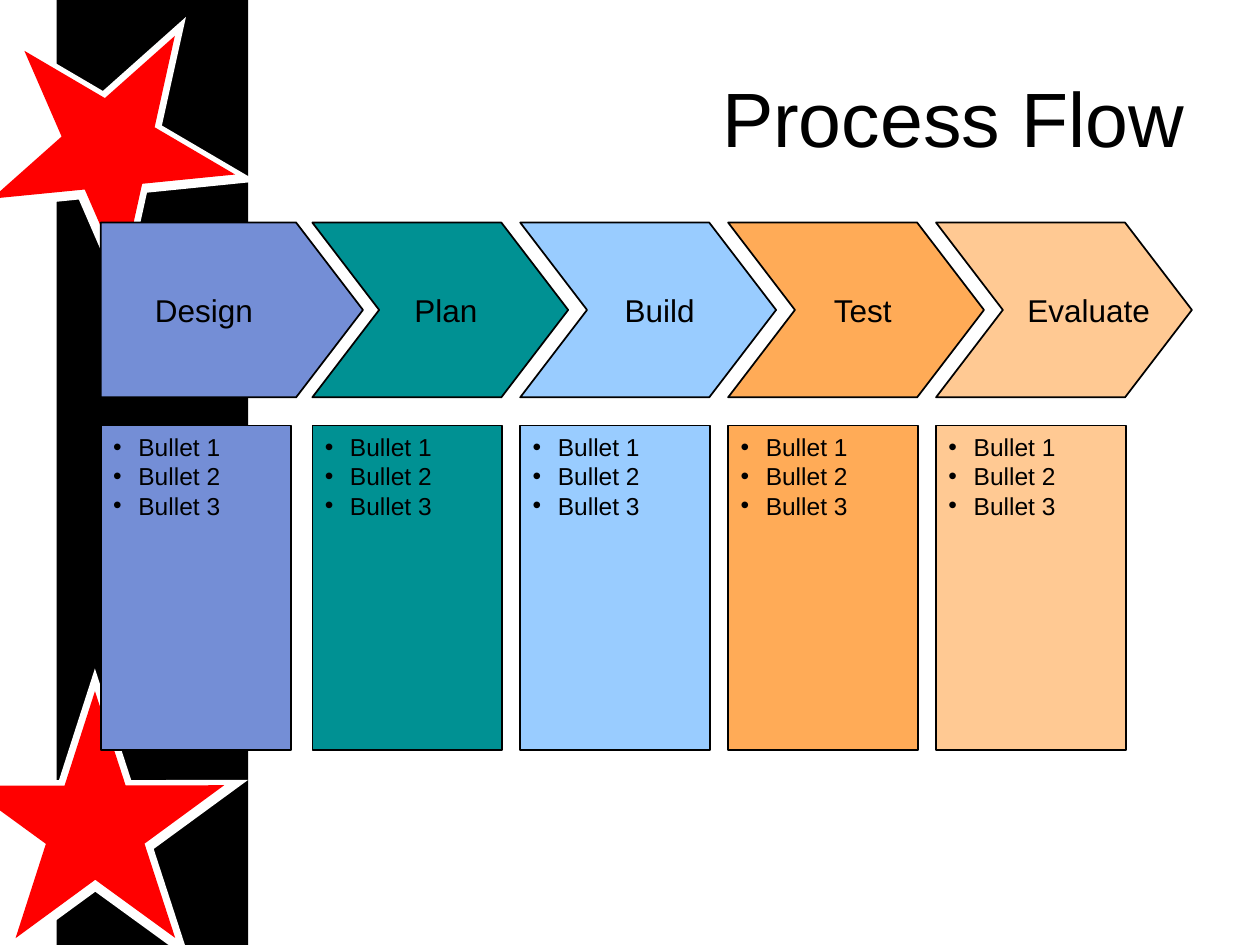
"""Build a five-stage process flow slide with star decoration."""
from pptx import Presentation
from pptx.dml.color import RGBColor
from pptx.enum.shapes import MSO_SHAPE
from pptx.enum.text import MSO_ANCHOR, MSO_AUTO_SIZE, PP_ALIGN
from pptx.oxml.ns import qn
from pptx.util import Pt
from lxml import etree

RECTANGLE, STAR = MSO_SHAPE.RECTANGLE, MSO_SHAPE.STAR_5_POINT
TOP, MIDDLE = MSO_ANCHOR.TOP, MSO_ANCHOR.MIDDLE
LEFT, RIGHT = PP_ALIGN.LEFT, PP_ALIGN.RIGHT
FIT_SHAPE = MSO_AUTO_SIZE.SHAPE_TO_FIT_TEXT

FONT = "Arial"
COLORS = {
    "black": "000000", "white": "FFFFFF", "red": "FF0000",
    "Design": "748ED6", "Plan": "009193", "Build": "99CCFF",
    "Test": "FFAB57", "Evaluate": "FFC993",
}
LABELS = {
    "Design": (81.4, 72), "Plan": (229.7, 52), "Build": (349.9, 56),
    "Test": (469.4, 51), "Evaluate": (580, 87),
}
BULLETS = ("Bullet 1", "Bullet 2", "Bullet 3")
FIRST_LEFT, SECOND_LEFT, PITCH = 57.6, 178.5, 118.8
ARROW_TOP, ARROW_HEIGHT, ARROW_TIP = 127.2, 99.9, 38.2
BOX_TOP, BOX_WIDTH, BOX_HEIGHT = 243.2, 108.6, 185.2


def color(name):
    """Return the named colour."""
    return RGBColor.from_string(COLORS[name])


def paint(shape, fill, outlined=False):
    """Give a shape a flat fill and an optional thin black outline."""
    shape.shadow.inherit = False
    shape.fill.solid()
    shape.fill.fore_color.rgb = color(fill)
    if outlined:
        shape.line.color.rgb = color("black")
        shape.line.width = Pt(1)
    else:
        shape.line.fill.background()


def add_preset(page, kind, left, top, width, height, fill, outlined=False):
    """Add a painted preset shape."""
    shape = page.shapes.add_shape(kind, Pt(left), Pt(top), Pt(width), Pt(height))
    paint(shape, fill, outlined)
    return shape


def add_star(page, center_x, center_y, outer, inner, angle):
    """Add a red star with a white star behind it as its border."""
    for (width, height), fill in ((outer, "white"), (inner, "red")):
        star = add_preset(page, STAR, center_x - width / 2,
                          center_y - height / 2, width, height, fill)
        star.rotation = angle


def add_span(para, text, size):
    """Add one run of black text."""
    span = para.add_run()
    span.text = text
    span.font.name = FONT
    span.font.size = Pt(size)
    span.font.color.rgb = color("black")


def add_text(page, left, top, width, height, text, size, align=LEFT):
    """Add a one-line text box and return its frame."""
    box = page.shapes.add_textbox(Pt(left), Pt(top), Pt(width), Pt(height))
    para = box.text_frame.paragraphs[0]
    para.alignment = align
    add_span(para, text, size)
    return box.text_frame


def add_bullet(para, text):
    """Fill a paragraph with a hanging bullet item."""
    para.alignment = LEFT
    props = para._p.get_or_add_pPr()
    props.set("marL", str(Pt(14.4)))
    props.set("indent", str(-Pt(14.4)))
    etree.SubElement(props, qn("a:buFont"), typeface=FONT)
    etree.SubElement(props, qn("a:buChar"), char="•")
    add_span(para, text, 14)


def add_bullet_box(page, left, fill):
    """Add the bulleted box under a stage."""
    box = add_preset(page, RECTANGLE, left, BOX_TOP, BOX_WIDTH, BOX_HEIGHT,
                     fill, outlined=True)
    frame = box.text_frame
    frame.word_wrap = True
    frame.vertical_anchor = TOP
    for index, text in enumerate(BULLETS):
        para = frame.add_paragraph() if index else frame.paragraphs[0]
        add_bullet(para, text)


def add_arrow(page, left, body, notch, fill):
    """Add a stage arrow, with a notch on its left side if asked for."""
    middle, bottom = ARROW_TOP + ARROW_HEIGHT / 2, ARROW_TOP + ARROW_HEIGHT
    corners = [(left + body, ARROW_TOP), (left + body + ARROW_TIP, middle),
               (left + body, bottom), (left, bottom)]
    if notch:
        corners.append((left + notch, middle))
    builder = page.shapes.build_freeform(Pt(left), Pt(ARROW_TOP))
    builder.add_line_segments([(Pt(x), Pt(y)) for x, y in corners], close=True)
    paint(builder.convert_to_shape(), fill, outlined=True)


def add_label(page, stage):
    """Add the name of a stage over its arrow."""
    left, width = LABELS[stage]
    frame = add_text(page, left, 162.7, width, 28.8, stage, 18)
    frame.word_wrap = False
    frame.auto_size = FIT_SHAPE


def main():
    """Build and save the slide."""
    deck = Presentation()
    deck.slide_width, deck.slide_height = Pt(720), Pt(540)
    page = deck.slides.add_slide(deck.slide_layouts[6])

    add_preset(page, RECTANGLE, 32.4, 0, 109.4, 540, "black")
    add_star(page, 66.2, 78, (165.6, 158.4), (139.7, 133.2), 30.4)
    add_star(page, 54.4, 465.5, (175, 167), (147.6, 141.1), 359.9)

    title = add_text(page, 38.2, 21.6, 645.8, 90, "Process Flow", 44, RIGHT)
    title.word_wrap = True
    title.vertical_anchor = MIDDLE

    for index, stage in enumerate(LABELS):
        left = SECOND_LEFT + (index - 1) * PITCH if index else FIRST_LEFT
        body, notch = (108, ARROW_TIP) if index else (111.6, 0)
        add_bullet_box(page, left, stage)
        add_arrow(page, left, body, notch, stage)
        add_label(page, stage)

    deck.save("out.pptx")


if __name__ == "__main__":
    main()
